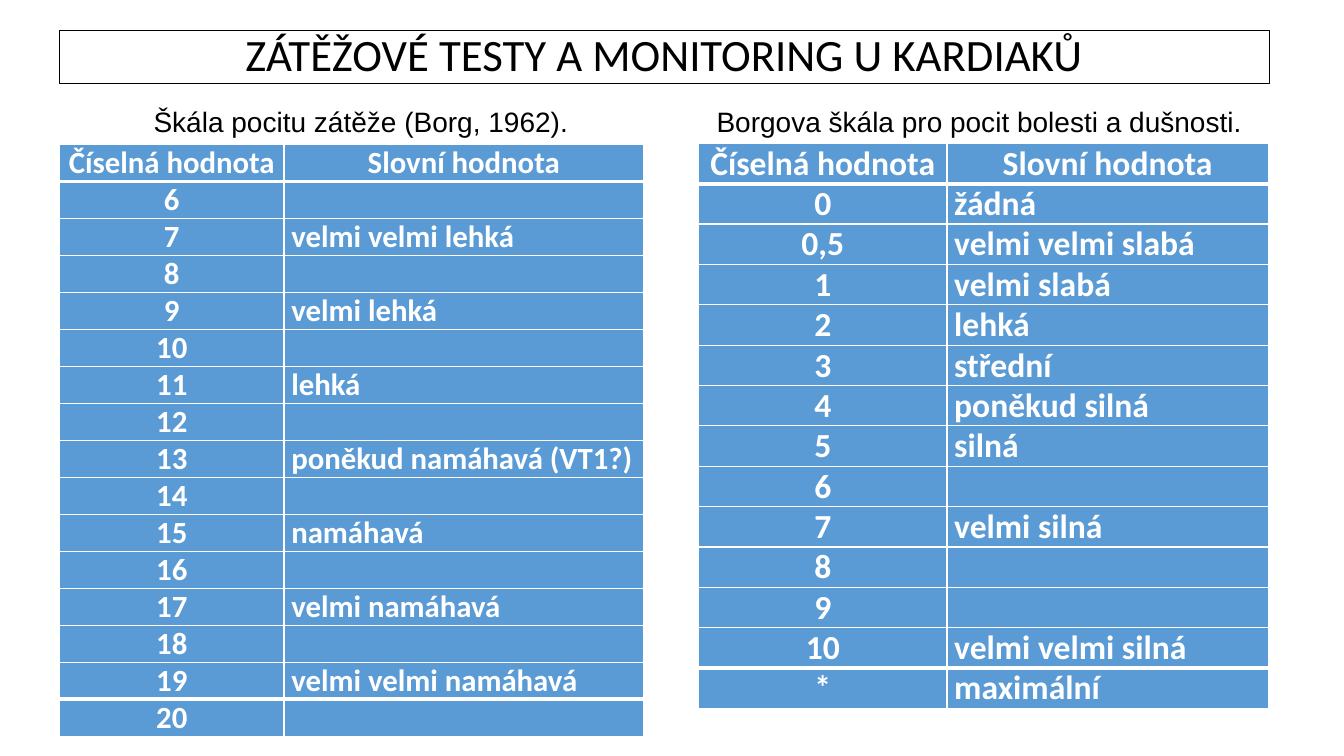
"""Build a slide with two Borg scales for exercise testing of cardiac patients."""
from lxml.etree import SubElement
from pptx import Presentation
from pptx.dml.color import RGBColor
from pptx.enum.text import MSO_ANCHOR, MSO_AUTO_SIZE, PP_ALIGN
from pptx.oxml.ns import qn
from pptx.util import Pt


def color(hex_string):
    return RGBColor.from_string(hex_string)


def write(text_frame, text, size, font="Calibri", hex_string="000000", bold=False,
          align=PP_ALIGN.CENTER, line_spacing=1.0):
    paragraph = text_frame.paragraphs[0]
    paragraph.alignment = align
    paragraph.line_spacing = line_spacing
    run = paragraph.add_run()
    run.text = text
    run.font.size = Pt(size)
    run.font.name = font
    run.font.bold = bold
    run.font.color.rgb = color(hex_string)


HEADER = ("Číselná hodnota", "Slovní hodnota")
EXERTION = {
    7: "velmi velmi lehká", 9: "velmi lehká", 11: "lehká",
    13: "poněkud namáhavá (VT1?)", 15: "namáhavá", 17: "velmi namáhavá",
    19: "velmi velmi namáhavá",
}
exertion_rows = [HEADER] + [(str(value), EXERTION.get(value, "")) for value in range(6, 21)]
pain_rows = [
    HEADER, ("0", "žádná"), ("0,5", "velmi velmi slabá"), ("1", "velmi slabá"),
    ("2", "lehká"), ("3", "střední"), ("4", "poněkud silná"), ("5", "silná"),
    ("6", ""), ("7", "velmi silná"), ("8", ""), ("9", ""),
    ("10", "velmi velmi silná"), ("*", "maximální"),
]

presentation = Presentation()
presentation.slide_width = Pt(960)
presentation.slide_height = Pt(540)
slide = presentation.slides.add_slide(presentation.slide_layouts[5])

title = slide.shapes.title
title.left, title.top, title.width, title.height = Pt(42.5), Pt(21.6), Pt(864), Pt(38)
title.line.color.rgb = color("000000")
title.line.width = Pt(0.75)
title.text_frame.auto_size = MSO_AUTO_SIZE.NONE
title.text_frame.vertical_anchor = MSO_ANCHOR.MIDDLE
write(title.text_frame, "ZÁTĚŽOVÉ TESTY A MONITORING U KARDIAKŮ", 32, line_spacing=0.9)

captions = [
    ("Škála pocitu zátěže (Borg, 1962).", 93.6, 328.4),
    ("Borgova škála pro pocit bolesti a dušnosti.", 481.7, 435.6),
]
for text, left, width in captions:
    caption = slide.shapes.add_textbox(Pt(left), Pt(70.6), Pt(width), Pt(31.5))
    caption.text_frame.word_wrap = True
    caption.text_frame.vertical_anchor = MSO_ANCHOR.MIDDLE
    write(caption.text_frame, text, 20, font="Arial")

scales = [
    (exertion_rows, 42.5, 103.2, (160.4, 256.8), 26.4, 22),
    (pain_rows, 499, 102.4, (177.4, 229.6), 28.8, 24),
]
for rows, left, top, widths, row_height, size in scales:
    last = len(rows) - 1
    table = slide.shapes.add_table(len(rows), 2, Pt(left), Pt(top), Pt(sum(widths)),
                                   Pt(row_height * len(rows))).table
    table.horz_banding = False
    for column, width in zip(table.columns, widths):
        column.width = Pt(width)
    for row_index, values in enumerate(rows):
        table.rows[row_index].height = Pt(row_height)
        borders = {
            "a:lnL": 1, "a:lnR": 1,
            "a:lnT": 3 if row_index in (1, last) else 1,
            "a:lnB": 3 if row_index in (0, last - 1) else 1,
        }
        for column_index, text in enumerate(values):
            cell = table.cell(row_index, column_index)
            cell.margin_left = cell.margin_right = Pt(5.2)
            cell.margin_top = cell.margin_bottom = 0
            properties = cell._tc.get_or_add_tcPr()
            for tag, weight in borders.items():
                line = SubElement(properties, qn(tag), w=str(Pt(weight)))
                fill = SubElement(line, qn("a:solidFill"))
                SubElement(fill, qn("a:srgbClr"), val="FFFFFF")
            cell.fill.solid()
            cell.fill.fore_color.rgb = color("5B9BD5")
            centered = row_index == 0 or column_index == 0
            if text:
                write(cell.text_frame, text, size, hex_string="FFFFFF", bold=True,
                      align=PP_ALIGN.CENTER if centered else PP_ALIGN.LEFT)

presentation.save("out.pptx")
